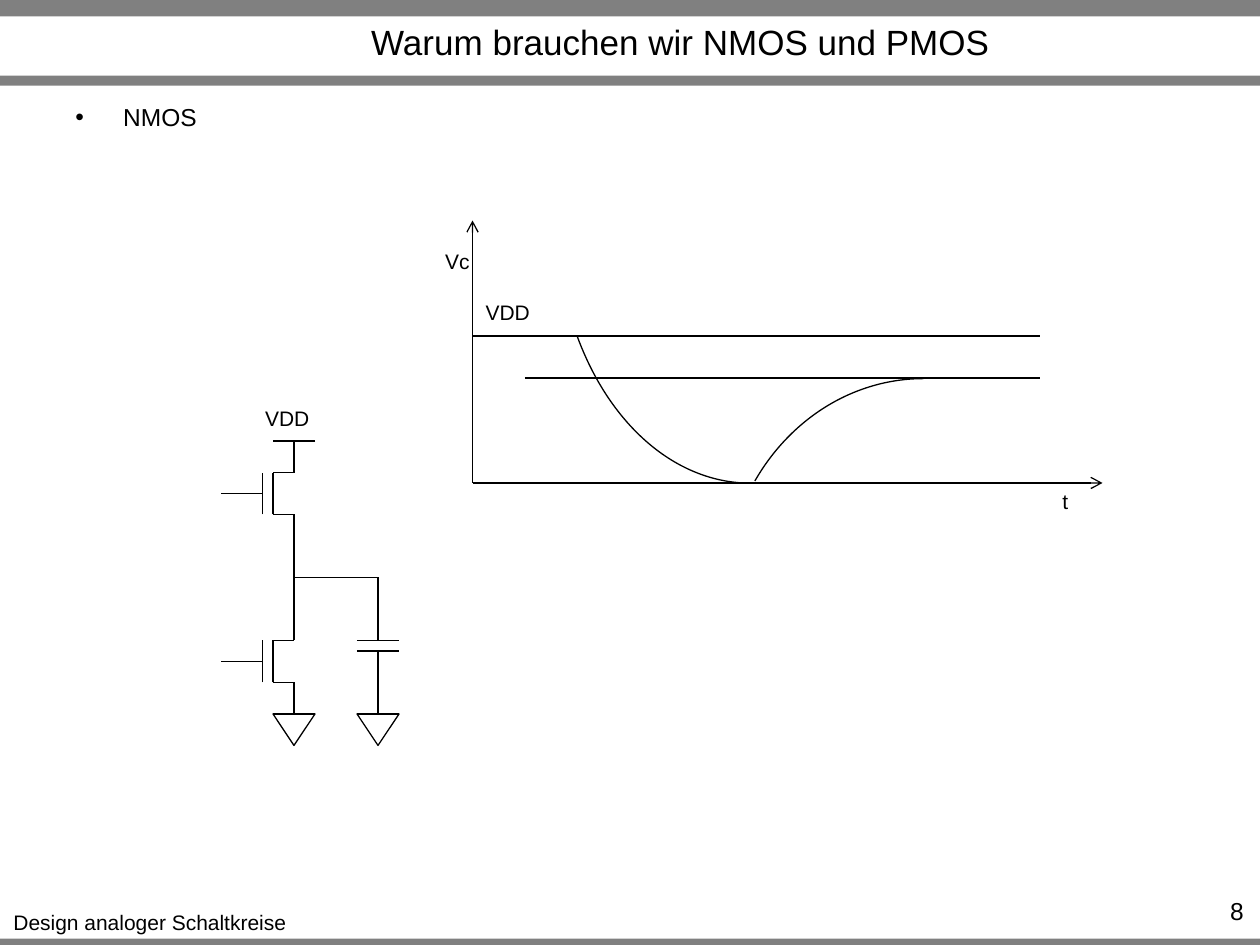
from typing import NamedTuple

from lxml import etree
from pptx import Presentation
from pptx import util as u
from pptx.dml.color import RGBColor
from pptx.enum import shapes, text
from pptx.oxml.ns import qn

COLORS = {"ink": "000000", "bar": "808080"}
FONT = "Arial"
GRID = 12


class Wire(NamedTuple):
    x1: int
    y1: int
    x2: int
    y2: int
    arrow: bool = False


class Label(NamedTuple):
    words: str
    left: float
    top: float
    width: float


class Arc(NamedTuple):
    left: float
    top: float
    width: float
    height: float
    rotation: int
    flips: tuple


BARS = [(0, 0.13), (0.6, 0.08), (7.45, 0.05)]
TRANSISTOR = [
    Wire(28, 2, 26, 2), Wire(26, 2, 26, -2), Wire(23, 0, 25, 0),
    Wire(25, 2, 25, -2), Wire(28, -2, 26, -2), Wire(28, -2, 28, -5),
    Wire(28, 5, 28, 2), Wire(23, 0, 21, 0),
]
GATE_ROWS = [47, 63]
CIRCUIT = [
    Wire(30, 42, 26, 42), Wire(28, 52, 28, 58), Wire(28, 55, 36, 55),
    Wire(36, 55, 36, 61), Wire(34, 61, 38, 61), Wire(34, 62, 38, 62),
    Wire(36, 62, 36, 68), Wire(30, 68, 26, 68), Wire(38, 68, 34, 68),
]
GRAPH = [
    Wire(45, 46, 105, 46, True), Wire(45, 46, 45, 21, True),
    Wire(55, 32, 45, 32), Wire(50, 32, 99, 32),
    Wire(98, 36, 88, 36), Wire(50, 36, 99, 36),
]
GROUND_COLUMNS = [26, 34]
ARCS = [
    Arc(3.83, 0.17, 4.25, 3.08, 270, ("flipH",)),
    Arc(5.58, 3.17, 3.5, 3.17, 90, ("flipH", "flipV")),
]
LABELS = [
    Label("t", 8.33, 3.83, 0.25), Label("Vc", 3.43, 1.92, 0.4),
    Label("VDD", 3.75, 2.33, 0.56), Label("VDD", 2, 3.17, 0.56),
    Label("Design analoger Schaltkreise", 0, 7.17, 2.38),
]


def color(name: str) -> RGBColor:
    """Return the named colour."""
    return RGBColor.from_string(COLORS[name])


def grid(steps: int) -> u.Length:
    """Return a length in twelfths of an inch."""
    return u.Inches(steps / GRID)


def place(shape, left: float, top: float, width: float, height: float) -> None:
    """Move and size a shape, in inches."""
    shape.left, shape.top = u.Inches(left), u.Inches(top)
    shape.width, shape.height = u.Inches(width), u.Inches(height)


def write(shape, words: str, *, size: int = 12, align=text.PP_ALIGN.CENTER,
          wrap: bool = True, anchor=text.MSO_ANCHOR.TOP, bullet: bool = False) -> None:
    """Put one formatted paragraph into a shape."""
    frame = shape.text_frame
    frame.word_wrap = wrap
    frame.auto_size = text.MSO_AUTO_SIZE.NONE if wrap else text.MSO_AUTO_SIZE.SHAPE_TO_FIT_TEXT
    frame.vertical_anchor = anchor
    para = frame.paragraphs[0]
    para.alignment = align
    if bullet:
        props = para._p.get_or_add_pPr()
        props.set("marL", str(u.Inches(0.38)))
        props.set("indent", str(u.Inches(-0.38)))
        etree.SubElement(props, qn("a:buFont")).set("typeface", FONT)
        etree.SubElement(props, qn("a:buChar")).set("char", "•")
    span = para.add_run()
    span.text = words
    span.font.name, span.font.size = FONT, u.Pt(size)
    span.font.color.rgb = color("ink")


def add_text(page, label: Label, height: float = 0.3, **style) -> None:
    """Add a text box."""
    box = page.shapes.add_textbox(0, 0, 0, 0)
    place(box, label.left, label.top, label.width, height)
    write(box, label.words, **style)


def add_wire(target, wire: Wire) -> None:
    """Draw a straight line, with an arrowhead if asked for."""
    line = target.add_connector(shapes.MSO_CONNECTOR.STRAIGHT, grid(wire.x1),
                                grid(wire.y1), grid(wire.x2), grid(wire.y2))
    line.line.color.rgb = color("ink")
    line.line.width = u.Pt(0.75)
    if wire.arrow:
        etree.SubElement(line.line._get_or_add_ln(), qn("a:tailEnd")).set("type", "arrow")
    etree.SubElement(line._element.spPr, qn("a:effectLst"))


def add_transistor(page, gate_row: int) -> None:
    """Draw a grouped transistor with its gate on the given grid row."""
    group = page.shapes.add_group_shape()
    for wire in TRANSISTOR:
        add_wire(group.shapes, wire._replace(y1=wire.y1 + gate_row, y2=wire.y2 + gate_row))


def add_outline(page, kind, flips: tuple):
    """Add an unfilled, flipped shape with a thin outline."""
    shape = page.shapes.add_shape(kind, 0, 0, 0, 0)
    shape.shadow.inherit = False
    shape.fill.background()
    shape.line.color.rgb = color("ink")
    shape.line.width = u.Pt(0.75)
    for flip in flips:
        shape._element.spPr.find(qn("a:xfrm")).set(flip, "1")
    return shape


def add_arc(page, arc: Arc) -> None:
    """Draw one section of the voltage curve."""
    shape = add_outline(page, shapes.MSO_SHAPE.ARC, arc.flips)
    place(shape, arc.left, arc.top, arc.width, arc.height)
    shape.rotation = arc.rotation
    shape.adjustments[0] = 183
    shape.adjustments[1] = 0


def add_ground(page, column: int) -> None:
    """Draw a ground symbol."""
    shape = add_outline(page, shapes.MSO_SHAPE.ISOSCELES_TRIANGLE, ("flipV",))
    place(shape, column / GRID, 68 / GRID, 4 / GRID, 3 / GRID)


def add_bar(page, top: float, height: float) -> None:
    """Draw a full-width bar."""
    bar = page.shapes.add_shape(shapes.MSO_SHAPE.RECTANGLE, 0, 0, 0, 0)
    place(bar, 0, top, 10, height)
    bar.shadow.inherit = False
    bar.fill.solid()
    bar.fill.fore_color.rgb = color("bar")
    bar.line.fill.background()


def main() -> None:
    """Build the slide and save it."""
    deck = Presentation()
    deck.slide_width, deck.slide_height = u.Inches(10), u.Inches(7.5)
    page = deck.slides.add_slide(deck.slide_layouts[5])
    for top, height in BARS:
        add_bar(page, top, height)
    title = page.shapes.title
    place(title, 1.3, 0.14, 8.2, 0.38)
    write(title, "Warum brauchen wir NMOS und PMOS", size=20, anchor=text.MSO_ANCHOR.MIDDLE)
    add_text(page, Label("NMOS", 0.5, 0.76, 9), 0.49, size=14,
             align=text.PP_ALIGN.LEFT, bullet=True)
    add_text(page, Label("8", 9.1, 7.06, 0.87), 0.24, size=14, align=text.PP_ALIGN.RIGHT)
    for row in GATE_ROWS:
        add_transistor(page, row)
    for wire in CIRCUIT + GRAPH:
        add_wire(page.shapes, wire)
    for column in GROUND_COLUMNS:
        add_ground(page, column)
    for arc in ARCS:
        add_arc(page, arc)
    for label in LABELS:
        add_text(page, label, wrap=False)
    deck.save("out.pptx")


if __name__ == "__main__":
    main()
